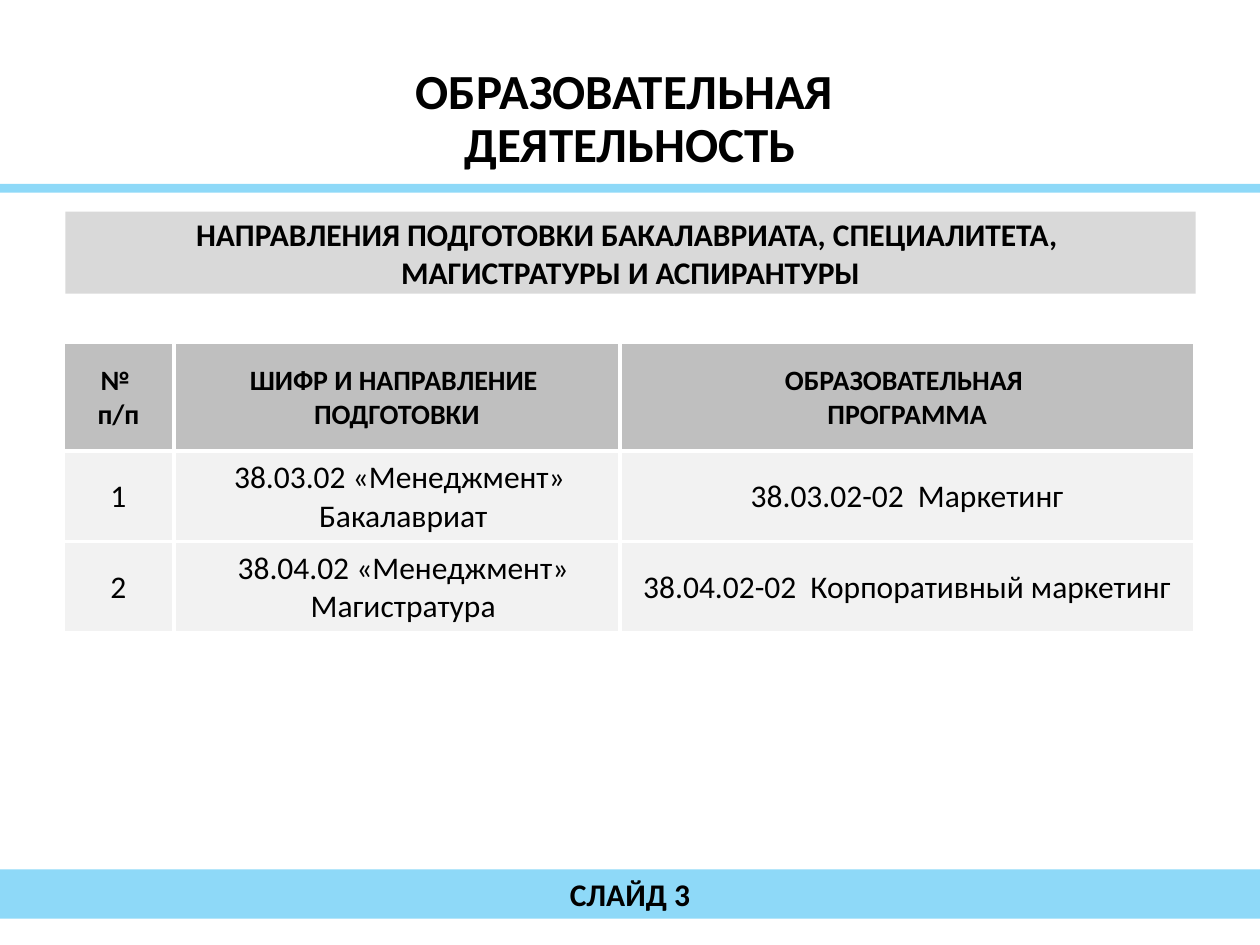
from lxml import etree
from pptx import Presentation
from pptx.dml.color import RGBColor
from pptx.enum.shapes import MSO_SHAPE as Shape
from pptx.enum.text import MSO_ANCHOR as Anchor, MSO_AUTO_SIZE as AutoSize, PP_ALIGN as Align
from pptx.oxml.ns import qn
from pptx.util import Inches, Pt

COLORS = {"sky": "8ED9F8", "band": "D9D9D9", "header": "BFBFBF",
          "row": "F2F2F2", "border": "FFFFFF", "text": "000000"}


def write(frame, paragraphs, size, bold=True, spacing=None, indent=0):
    font_format = {"name": "Calibri", "size": Pt(size), "bold": bold}
    for number, content in enumerate(paragraphs):
        paragraph = frame.add_paragraph() if number else frame.paragraphs[0]
        paragraph.text = content
        paragraph.alignment = Align.CENTER
        if spacing:
            paragraph.line_spacing = spacing
        if indent:
            properties = paragraph._p.get_or_add_pPr()
            properties.set("marL", str(Inches(indent)))
            properties.set("indent", "0")
        for run in paragraph.runs:
            for attribute, value in font_format.items():
                setattr(run.font, attribute, value)
            run.font.color.rgb = RGBColor.from_string(COLORS["text"])


def add_bar(left, top, width, height, color, content=None):
    bar = slide.shapes.add_shape(Shape.RECTANGLE, Inches(left), Inches(top),
                                 Inches(width), Inches(height))
    bar.shadow.inherit = False
    bar.fill.solid()
    bar.fill.fore_color.rgb = RGBColor.from_string(COLORS[color])
    bar.line.fill.background()
    if content:
        bar.text_frame.vertical_anchor = Anchor.MIDDLE
        write(bar.text_frame, [content], 18)


presentation = Presentation()
presentation.slide_width = Inches(10)
presentation.slide_height = Inches(7.5)
slide = presentation.slides.add_slide(presentation.slide_layouts[5])

heading = slide.shapes.title
heading_place = {"left": 0, "top": 0.52, "width": 10, "height": 0.87}
for attribute, value in heading_place.items():
    setattr(heading, attribute, Inches(value))
heading_format = {"auto_size": AutoSize.NONE, "vertical_anchor": Anchor.MIDDLE, "word_wrap": True}
for attribute, value in heading_format.items():
    setattr(heading.text_frame, attribute, value)
write(heading.text_frame, ["ОБРАЗОВАТЕЛЬНАЯ ", "ДЕЯТЕЛЬНОСТЬ"], 28, spacing=0.9)

add_bar(0, 1.46, 10, 0.07, "sky")
add_bar(0.52, 1.68, 8.97, 0.65, "band",
        "НАПРАВЛЕНИЯ ПОДГОТОВКИ БАКАЛАВРИАТА, СПЕЦИАЛИТЕТА, \nМАГИСТРАТУРЫ И АСПИРАНТУРЫ")
add_bar(0, 6.9, 10, 0.39, "sky", "СЛАЙД 3")

programs = [
    [["№ \nп/п"], ["ШИФР И НАПРАВЛЕНИЕ \nПОДГОТОВКИ"], ["ОБРАЗОВАТЕЛЬНАЯ \nПРОГРАММА"]],
    [["1"], ["38.03.02 «Менеджмент» \nБакалавриат"], ["38.03.02-02  Маркетинг"]],
    [["2"], ["38.04.02 «Менеджмент»", "Магистратура"], ["38.04.02-02  Корпоративный маркетинг"]],
]
column_widths = [0.88, 3.54, 4.56]
row_heights = [0.86, 0.72, 0.72]
cell_format = {"vertical_anchor": Anchor.MIDDLE, "margin_left": Inches(0.01),
               "margin_right": Inches(0.01), "margin_top": Inches(0.01), "margin_bottom": 0}

program_table = slide.shapes.add_table(
    len(row_heights), len(column_widths), Inches(0.5), Inches(2.72),
    Inches(sum(column_widths)), Inches(sum(row_heights))).table
for column, width in zip(program_table.columns, column_widths):
    column.width = Inches(width)
for row, height in zip(program_table.rows, row_heights):
    row.height = Inches(height)

for row_number, program in enumerate(programs):
    is_header = row_number == 0
    for column_number, content in enumerate(program):
        cell = program_table.cell(row_number, column_number)
        for attribute, value in cell_format.items():
            setattr(cell, attribute, value)
        write(cell.text_frame, content, 16 if is_header else 18, bold=is_header,
              indent=0.1 if column_number == 1 and not is_header else 0)
        cell.fill.solid()
        cell.fill.fore_color.rgb = RGBColor.from_string(COLORS["header" if is_header else "row"])
        cell_properties = cell._tc.get_or_add_tcPr()
        for position, side in enumerate(["a:lnL", "a:lnR", "a:lnT", "a:lnB"]):
            border = etree.Element(qn(side), w=str(Pt(2.25)))
            border_fill = etree.SubElement(border, qn("a:solidFill"))
            etree.SubElement(border_fill, qn("a:srgbClr"), val=COLORS["border"])
            cell_properties.insert(position, border)

presentation.save("out.pptx")
